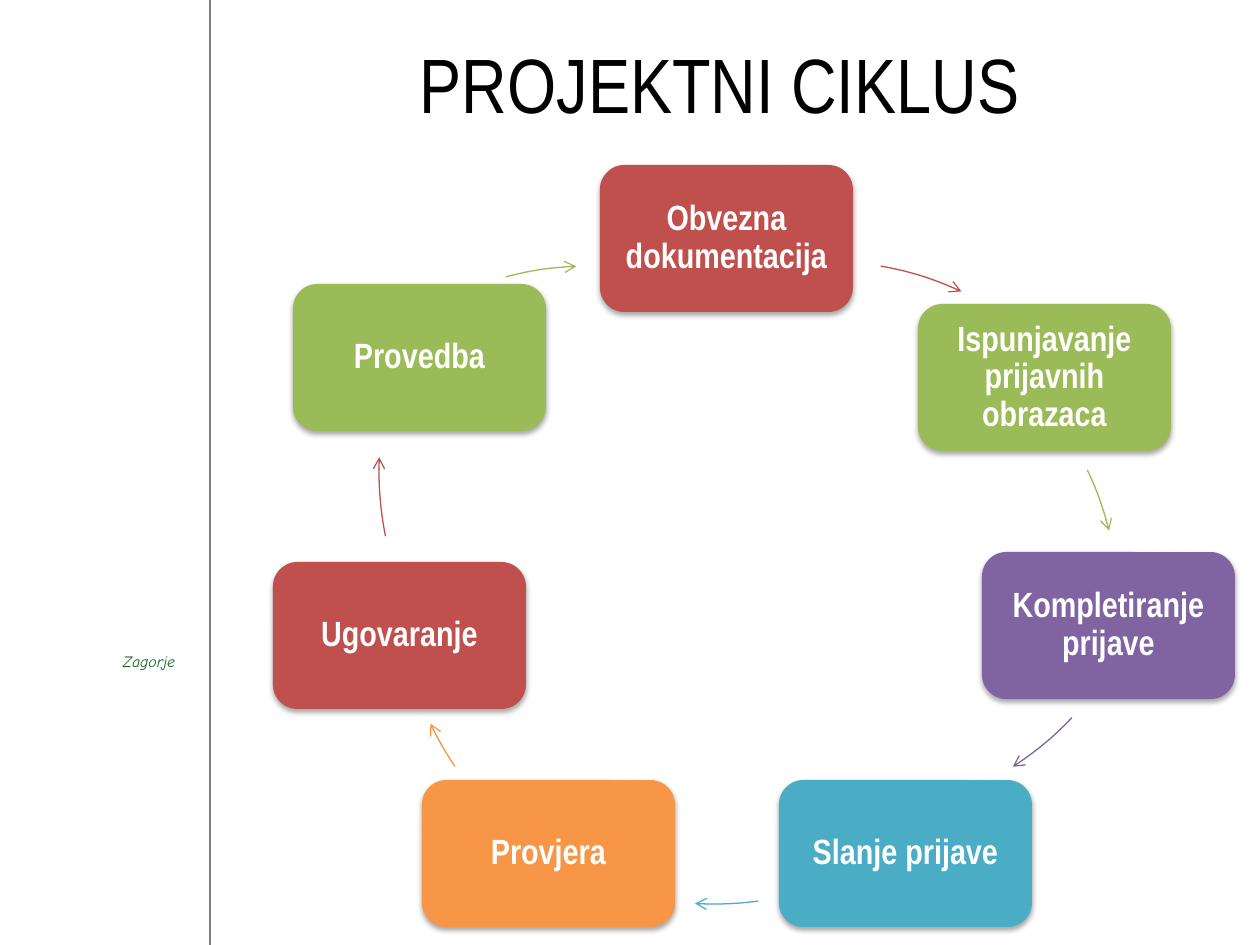
"""Build a slide showing the seven steps of the project cycle."""
from dataclasses import dataclass

from lxml import etree
from pptx import Presentation
from pptx.dml.color import RGBColor
from pptx.enum.shapes import MSO_CONNECTOR, MSO_SHAPE
from pptx.enum.text import MSO_ANCHOR, MSO_AUTO_SIZE, PP_ALIGN
from pptx.oxml import parse_xml
from pptx.oxml.ns import nsdecls, qn
from pptx.util import Emu, Pt

STRAIGHT = MSO_CONNECTOR.STRAIGHT
ROUNDED, RECTANGLE, ARC = MSO_SHAPE.ROUNDED_RECTANGLE, MSO_SHAPE.RECTANGLE, MSO_SHAPE.ARC
TOP, MIDDLE = MSO_ANCHOR.TOP, MSO_ANCHOR.MIDDLE
LEFT, CENTER = PP_ALIGN.LEFT, PP_ALIGN.CENTER
NO_FIT = MSO_AUTO_SIZE.NONE
PX_PER_INCH = 126
SLIDE_WIDTH, SLIDE_HEIGHT = 1260, 945
STEP_WIDTH, STEP_HEIGHT, CIRCLE = 253, 147, 660


@dataclass(frozen=True)
class Theme:
    """Colours, fonts and type sizes of the slide."""
    white: str = "FFFFFF"
    black: str = "000000"
    gray: str = "808080"
    forest: str = "116319"
    red: str = "C0504D"
    green: str = "9BBB59"
    purple: str = "8064A2"
    blue: str = "4BACC6"
    orange: str = "F79646"
    font: str = "Arial Narrow"
    label_font: str = "Comic Neue"
    title_size: int = 44
    step_size: int = 20
    label_size: int = 9
    line_width: float = 0.75


def px(length):
    """Turn a length in px into EMU."""
    return Emu(round(length * 914400 / PX_PER_INCH))


def write(frame, text, *, font, size, color, bold=False, italic=False,
          align=CENTER, anchor=MIDDLE, spacing=1.0, insets=(13, 6)):
    """Put one formatted paragraph into a text frame."""
    frame.word_wrap = True
    frame.auto_size = NO_FIT
    frame.vertical_anchor = anchor
    frame.margin_left = frame.margin_right = px(insets[0])
    frame.margin_top = frame.margin_bottom = px(insets[1])
    para = frame.paragraphs[0]
    para.alignment = align
    para.line_spacing = spacing
    span = para.add_run()
    span.text = text
    span.font.name = font
    span.font.size = Pt(size)
    span.font.bold = bold
    span.font.italic = italic
    span.font.color.rgb = RGBColor.from_string(color)


class Page:
    """The current slide and its style."""

    def __init__(self, slide, theme):
        """Keep the slide and the theme."""
        self.slide, self.theme = slide, theme

    def stroke(self, line, color):
        """Give a line its colour and width."""
        line.color.rgb = RGBColor.from_string(color)
        line.width = Pt(self.theme.line_width)

    def shape(self, kind, left, top, width, height):
        """Add a preset shape without a shadow."""
        box = self.slide.shapes.add_shape(kind, px(left), px(top), px(width), px(height))
        box.shadow.inherit = False
        return box

    def title(self, text, left, top, width, height):
        """Move and fill the title placeholder."""
        box = self.slide.shapes.title
        box.left, box.top, box.width, box.height = map(px, (left, top, width, height))
        write(box.text_frame, text, font=self.theme.font,
              size=self.theme.title_size, color=self.theme.black)

    def rule(self, left):
        """Add a vertical rule over the full slide height."""
        rule = self.slide.shapes.add_connector(
            STRAIGHT, px(left), 0, px(left), px(SLIDE_HEIGHT))
        self.stroke(rule.line, self.theme.gray)
        etree.SubElement(rule.element.spPr, qn("a:effectLst"))

    def label(self, text, left, top, width, height):
        """Add the small label of the side band."""
        box = self.shape(RECTANGLE, left, top, width, height)
        box.fill.solid()
        box.fill.fore_color.rgb = RGBColor.from_string(self.theme.white)
        self.stroke(box.line, self.theme.white)
        write(box.text_frame, text, font=self.theme.label_font, size=self.theme.label_size,
              color=self.theme.forest, italic=True, align=LEFT, anchor=TOP)

    def step(self, text, color, left, top):
        """Add one rounded step with a soft shadow."""
        box = self.shape(ROUNDED, left, top, STEP_WIDTH, STEP_HEIGHT)
        box.fill.solid()
        box.fill.fore_color.rgb = RGBColor.from_string(color)
        box.line.fill.background()
        box.element.spPr.find(qn("a:effectLst")).append(parse_xml(
            f'<a:outerShdw {nsdecls("a")} blurRad="{Pt(3.1)}" dist="{Pt(1.8)}" '
            f'dir="5400000" rotWithShape="0"><a:srgbClr val="{self.theme.black}">'
            '<a:alpha val="35000"/></a:srgbClr></a:outerShdw>'))
        write(box.text_frame, text, font=self.theme.font, size=self.theme.step_size,
              color=self.theme.white, bold=True, spacing=0.9, insets=(10, 10))

    def arrow(self, color, left, top, start, end):
        """Add a clockwise circular arrow between two angles in degrees."""
        arc = self.shape(ARC, left, top, CIRCLE, CIRCLE)
        for index, angle in enumerate((start, end)):
            arc.adjustments[index] = angle * 0.6
        arc.fill.background()
        self.stroke(arc.line, color)
        etree.SubElement(arc.element.spPr.find(qn("a:ln")), qn("a:tailEnd"), type="arrow")


def main():
    """Build and save the deck."""
    theme = Theme()
    deck = Presentation()
    deck.slide_width, deck.slide_height = px(SLIDE_WIDTH), px(SLIDE_HEIGHT)
    page = Page(deck.slides.add_slide(deck.slide_layouts[5]), theme)
    page.rule(210)
    page.label("Zagorje", 110, 646, 96, 49)
    page.title("PROJEKTNI CIKLUS", 233, 4, 974, 158)
    steps = (
        ("Obvezna dokumentacija", theme.red, (600, 165), (493, 261, 280.1, 294.8)),
        ("Ispunjavanje prijavnih obrazaca", theme.green, (918, 304), (459, 281, 334.7, 345.9)),
        ("Kompletiranje prijave", theme.purple, (982, 552), (503, 160, 43.6, 57)),
        ("Slanje prijave", theme.blue, (779, 780), (384, 244, 82.3, 93.3)),
        ("Provjera", theme.orange, (422, 780), (398, 251, 145.8, 154.4)),
        ("Ugovaranje", theme.red, (273, 562), (379, 141, 168.6, 182.4)),
        ("Provedba", theme.green, (293, 284), (260, 266, 255.2, 267.6)),
    )
    for text, color, place, arc in steps:
        page.step(text, color, *place)
        page.arrow(color, *arc)
    deck.save("out.pptx")


if __name__ == "__main__":
    main()
